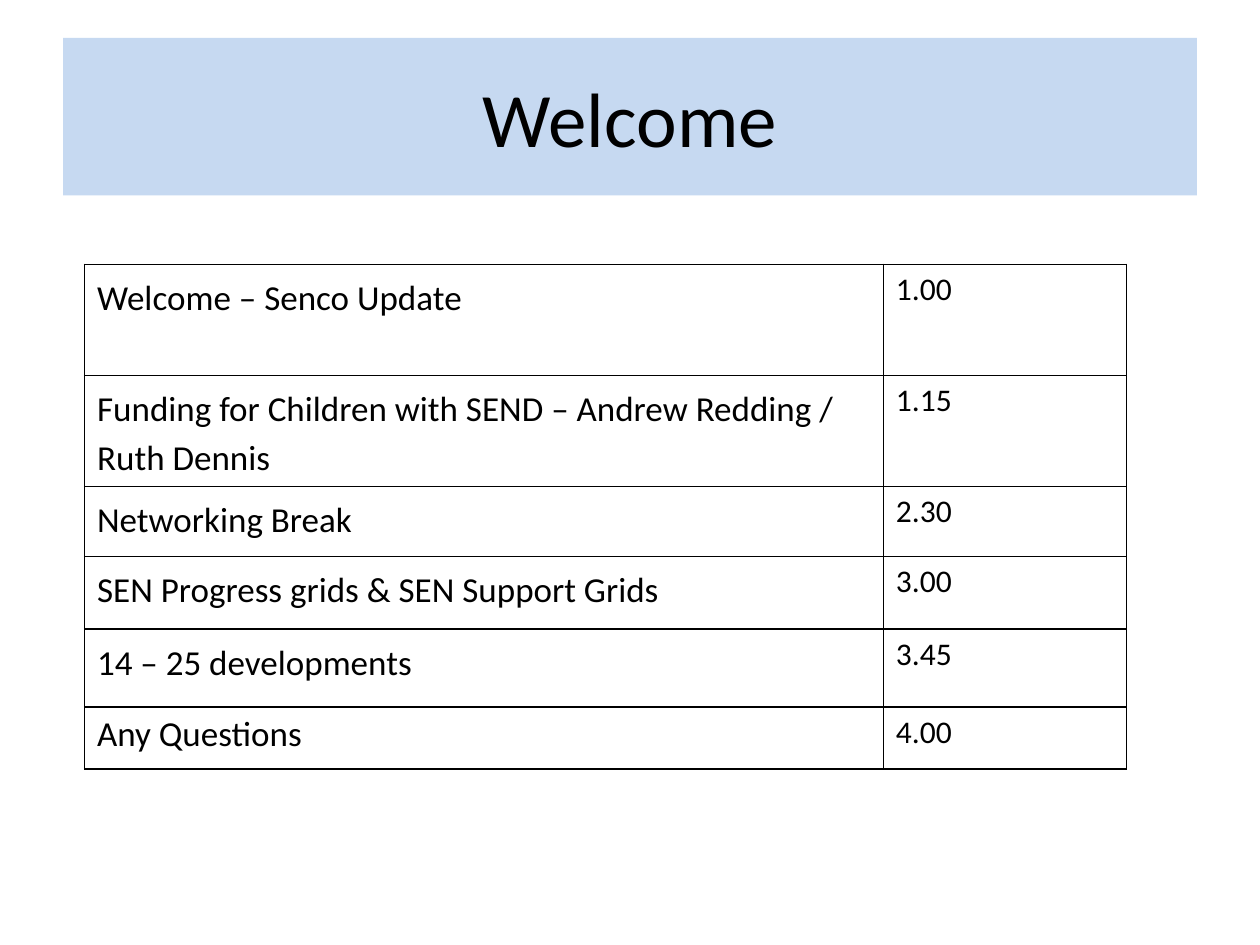
"""Build a welcome slide with a timed agenda table."""
from dataclasses import dataclass

from lxml.etree import SubElement
from pptx import Presentation
from pptx.dml.color import RGBColor
from pptx.enum.text import MSO_ANCHOR, PP_ALIGN
from pptx.oxml.ns import qn
from pptx.slide import Slide
from pptx.table import _Cell
from pptx.util import Pt

BLACK = RGBColor(0x00, 0x00, 0x00)
PALE_BLUE = RGBColor(0xC6, 0xD9, 0xF1)
FONT_NAME = "Calibri"
TITLE_ONLY_LAYOUT = 5
COLUMN_WIDTHS = (456.5, 139)


@dataclass(frozen=True)
class AgendaItem:
    topic: str
    time: str
    height: float
    line_spacing: float = 1.15
    space_after: float = 0


AGENDA = (
    AgendaItem("Welcome – Senco Update", "1.00", 63.5),
    AgendaItem("Funding for Children with SEND – Andrew Redding / Ruth Dennis", "1.15", 63.5),
    AgendaItem("Networking Break", "2.30", 40),
    AgendaItem("SEN Progress grids & SEN Support Grids", "3.00", 41.5),
    AgendaItem("14 – 25 developments", "3.45", 44.5, space_after=10),
    AgendaItem("Any Questions", "4.00", 35.5, line_spacing=1),
)


def format_font(font, size: float) -> None:
    font.name = FONT_NAME
    font.size = Pt(size)
    font.color.rgb = BLACK


def add_title(slide: Slide, text: str) -> None:
    title = slide.shapes.title
    title.left, title.top, title.width, title.height = Pt(36), Pt(21.6), Pt(648), Pt(90)
    title.fill.solid()
    title.fill.fore_color.rgb = PALE_BLUE
    title.text_frame.text = text
    title.text_frame.vertical_anchor = MSO_ANCHOR.MIDDLE
    paragraph = title.text_frame.paragraphs[0]
    paragraph.alignment = PP_ALIGN.CENTER
    format_font(paragraph.font, 44)


def add_borders(cell: _Cell) -> None:
    properties = cell._tc.get_or_add_tcPr()
    for position, side in enumerate(("lnL", "lnR", "lnT", "lnB")):
        line = SubElement(properties, qn(f"a:{side}"), w=str(Pt(1)))
        fill = SubElement(line, qn("a:solidFill"))
        SubElement(fill, qn("a:srgbClr"), val=str(BLACK))
        properties.insert(position, line)


def fill_cell(cell: _Cell, text: str, size: float, line_spacing: float = 1, space_after: float = 0) -> None:
    cell.text = text
    cell.fill.background()
    add_borders(cell)
    paragraph = cell.text_frame.paragraphs[0]
    paragraph.line_spacing = line_spacing
    paragraph.space_after = Pt(space_after)
    format_font(paragraph.font, size)


def add_agenda(slide: Slide, items: tuple[AgendaItem, ...]) -> None:
    width = sum(COLUMN_WIDTHS)
    height = sum(item.height for item in items)
    frame = slide.shapes.add_table(
        len(items), len(COLUMN_WIDTHS), Pt(48.3), Pt(151), Pt(width), Pt(height)
    )
    table = frame.table
    table.first_row = False
    table.horz_banding = False
    for column, column_width in zip(table.columns, COLUMN_WIDTHS):
        column.width = Pt(column_width)
    for row, item in zip(table.rows, items):
        row.height = Pt(item.height)
        topic_cell, time_cell = row.cells
        fill_cell(topic_cell, item.topic, 20, item.line_spacing, item.space_after)
        fill_cell(time_cell, item.time, 18)


def main() -> None:
    presentation = Presentation()
    presentation.slide_width, presentation.slide_height = Pt(720), Pt(540)
    slide = presentation.slides.add_slide(presentation.slide_layouts[TITLE_ONLY_LAYOUT])
    add_title(slide, "Welcome")
    add_agenda(slide, AGENDA)
    presentation.save("out.pptx")


if __name__ == "__main__":
    main()
